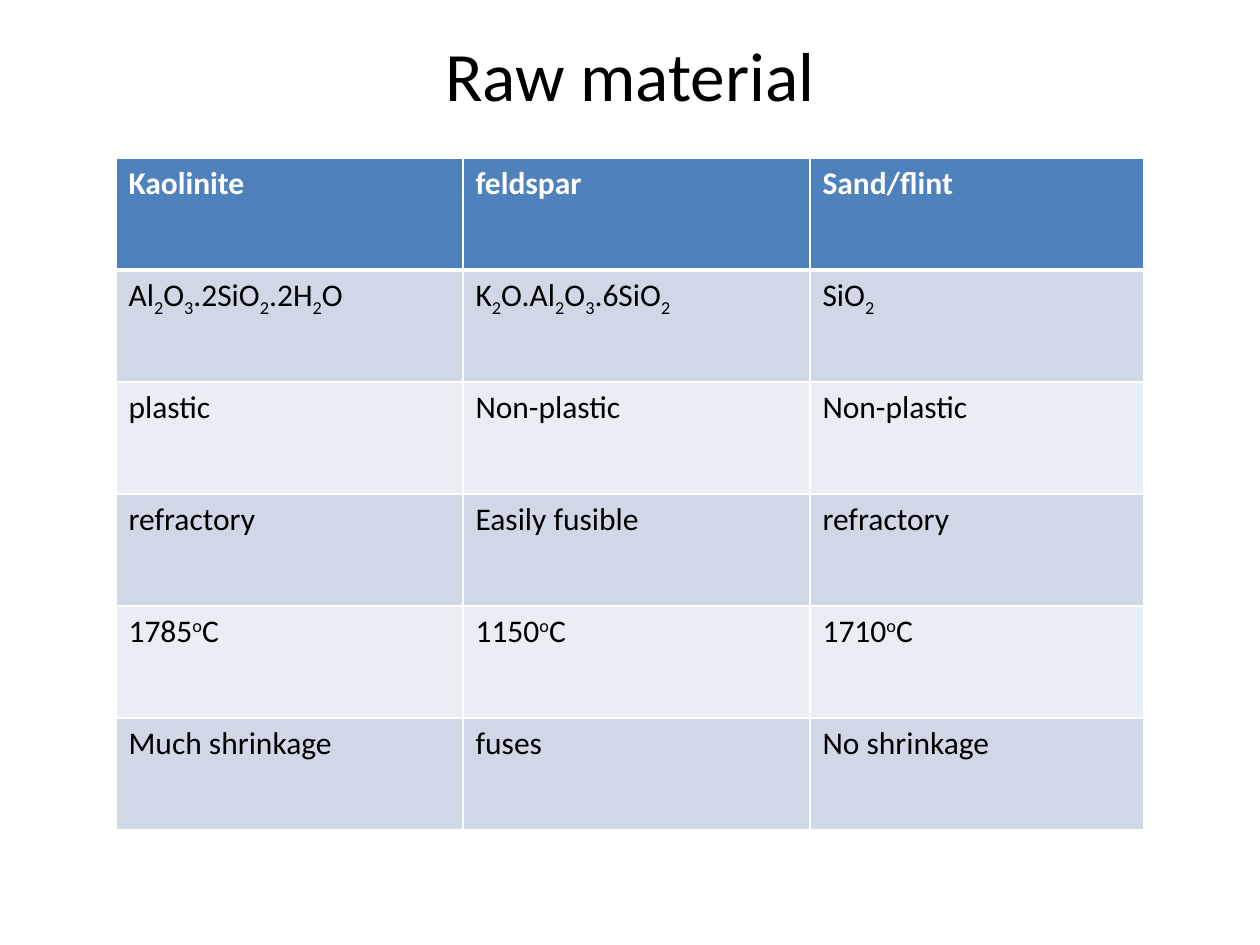
from typing import NamedTuple

from lxml.etree import SubElement
from pptx import Presentation
from pptx.dml.color import RGBColor
from pptx.enum.text import MSO_ANCHOR, PP_ALIGN
from pptx.oxml.ns import qn
from pptx.util import Pt

EMU_PER_PX = 914400 / 126
FONT = "Calibri"
WHITE, BLACK = "FFFFFF", "000000"
BASELINES = {"_": "-25000", "^": "30000"}


class RowStyle(NamedTuple):
    fill: str
    color: str
    bold: bool
    top: int
    bottom: int


HEADER = RowStyle("4F81BD", WHITE, True, 1, 3)
FIRST = RowStyle("D0D8E8", BLACK, False, 3, 1)
DARK = RowStyle("D0D8E8", BLACK, False, 1, 1)
LIGHT = RowStyle("E9EDF4", BLACK, False, 1, 1)

# Pieces are split by "|"; "_" starts a subscript and "^" a superscript
ROWS = [
    (HEADER, ["Kaolinite", "feldspar", "Sand/flint"]),
    (FIRST, ["Al|_2|O|_3|.2SiO|_2|.2H|_2|O", "K|_2|O.Al|_2|O|_3|.6SiO|_2", "SiO|_2"]),
    (LIGHT, ["plastic", "Non-plastic", "Non-plastic"]),
    (DARK, ["refractory", "Easily fusible", "refractory"]),
    (LIGHT, ["1785|^o|C", "1150|^o|C", "1710|^o|C"]),
    (DARK, ["Much shrinkage", "fuses", "No shrinkage"]),
]
COL_WIDTHS = [347, 347, 334]
ROW_HEIGHT = 112


def px(n: int) -> int:
    return round(n * EMU_PER_PX)


def rgb(value: str) -> RGBColor:
    return RGBColor.from_string(value)


def format_font(font, size: float, color: str, bold: bool = False) -> None:
    font.name, font.size, font.bold = FONT, Pt(size), bold
    font.color.rgb = rgb(color)


def add_title(s, text: str) -> None:
    tf = s.shapes.add_textbox(px(63), px(32), px(1134), px(126)).text_frame
    tf.word_wrap = True
    tf.vertical_anchor = MSO_ANCHOR.TOP
    tf.margin_top = 0
    tf.text = text
    p = tf.paragraphs[0]
    p.alignment = PP_ALIGN.CENTER
    format_font(p.runs[0].font, 39.6, BLACK)


def add_borders(cell, style: RowStyle) -> None:
    tc_pr = cell._tc.get_or_add_tcPr()
    widths = {"lnL": 1, "lnR": 1, "lnT": style.top, "lnB": style.bottom}
    for side, width in widths.items():
        ln = SubElement(tc_pr, qn(f"a:{side}"), w=str(Pt(width)))
        SubElement(SubElement(ln, qn("a:solidFill")), qn("a:srgbClr"), val=WHITE)


def fill_cell(cell, markup: str, style: RowStyle) -> None:
    add_borders(cell, style)
    cell.fill.solid()
    cell.fill.fore_color.rgb = rgb(style.fill)
    p = cell.text_frame.paragraphs[0]
    for piece in markup.split("|"):
        r = p.add_run()
        r.text = piece.lstrip("_^")
        format_font(r.font, 18, style.color, style.bold)
        if piece[0] in BASELINES:
            r._r.get_or_add_rPr().set("baseline", BASELINES[piece[0]])


def add_materials_table(s) -> None:
    table = s.shapes.add_table(
        len(ROWS), len(COL_WIDTHS), px(116), px(158),
        px(sum(COL_WIDTHS)), px(ROW_HEIGHT * len(ROWS)),
    ).table
    for column, width in zip(table.columns, COL_WIDTHS):
        column.width = px(width)
    for row, (style, texts) in zip(table.rows, ROWS):
        row.height = px(ROW_HEIGHT)
        for cell, markup in zip(row.cells, texts):
            fill_cell(cell, markup, style)


def main() -> None:
    prs = Presentation()
    prs.slide_width, prs.slide_height = px(1260), px(945)
    s = prs.slides.add_slide(prs.slide_layouts[6])
    add_title(s, "Raw material")
    add_materials_table(s)
    prs.save("out.pptx")


if __name__ == "__main__":
    main()
